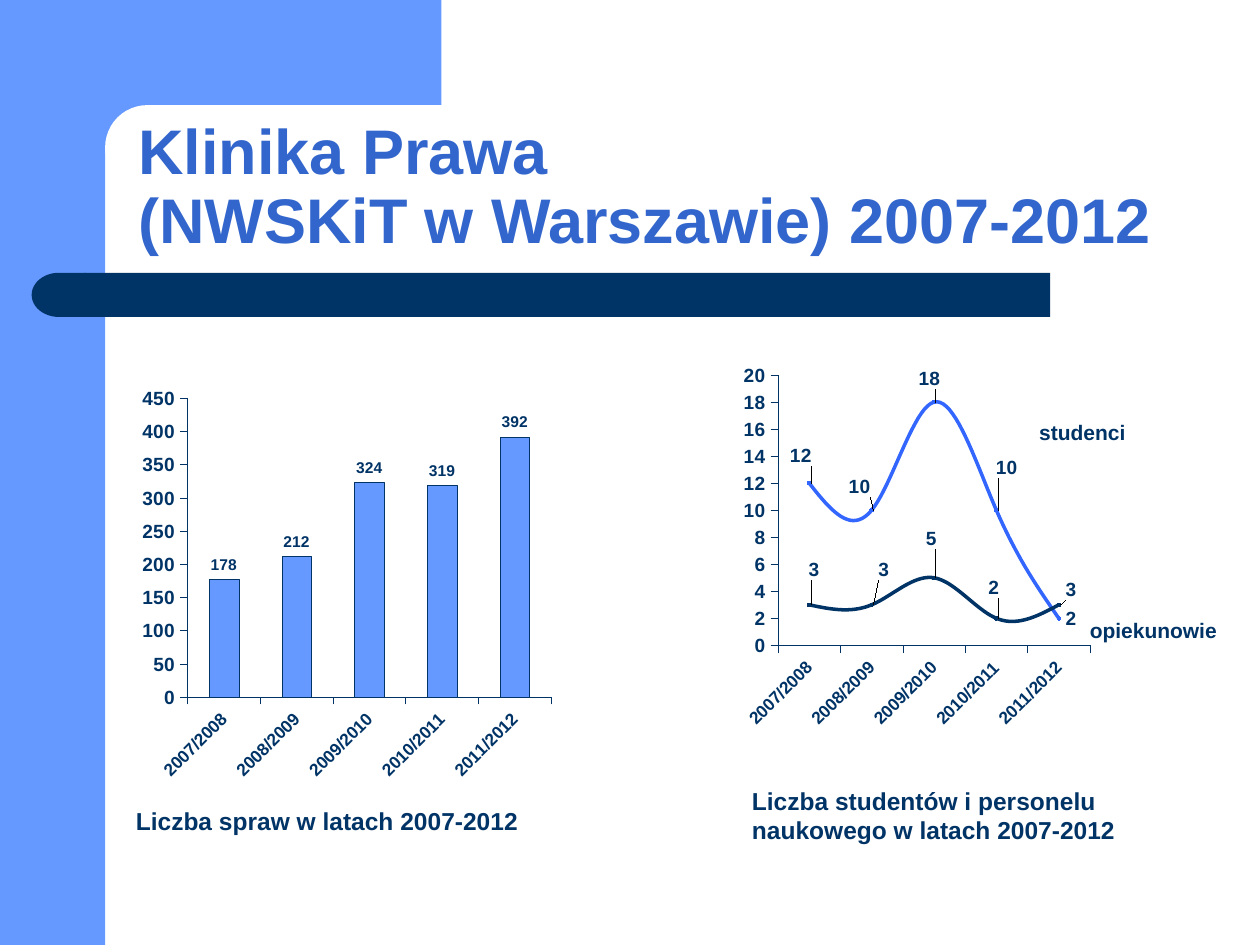
from dataclasses import dataclass

from lxml.etree import SubElement
from pptx import Presentation
from pptx.chart.axis import _BaseAxis
from pptx.chart.chart import Chart
from pptx.chart.data import CategoryChartData
from pptx.chart.series import LineSeries
from pptx.dml.color import RGBColor
from pptx.enum.chart import XL_CHART_TYPE, XL_LABEL_POSITION, XL_MARKER_STYLE, XL_TICK_MARK
from pptx.enum.shapes import MSO_SHAPE
from pptx.enum.text import MSO_ANCHOR
from pptx.oxml.ns import qn
from pptx.slide import Slide
from pptx.text.text import Font
from pptx.util import Cm, Pt

SKY = RGBColor(0x66, 0x99, 0xFF)
NAVY = RGBColor(0x00, 0x33, 0x66)
BLUE = RGBColor(0x33, 0x66, 0xCC)
BRIGHT = RGBColor(0x33, 0x66, 0xFF)
WHITE = RGBColor(0xFF, 0xFF, 0xFF)
FONT_NAME = "Arial"
YEARS = [f"{year}/{year + 1}" for year in range(2007, 2012)]


@dataclass
class Box:
    left: float
    top: float
    width: float
    height: float

    def lengths(self) -> list[Cm]:
        return [Cm(value) for value in (self.left, self.top, self.width, self.height)]


@dataclass
class Panel:
    kind: MSO_SHAPE
    box: Box
    color: RGBColor
    mirrored: bool = False


@dataclass
class Label:
    text: str
    box: Box
    size: float
    color: RGBColor = NAVY
    anchor: MSO_ANCHOR = MSO_ANCHOR.TOP
    line_spacing: float = 1.0


@dataclass
class Curve:
    name: str
    values: list[int]
    color: RGBColor
    marker_color: RGBColor
    label_shifts: list[tuple[float, float]]


PANELS = [
    Panel(MSO_SHAPE.RECTANGLE, Box(0, 0, 2.12, 19.05), SKY),
    Panel(MSO_SHAPE.RECTANGLE, Box(1.9, 0, 7, 2.96), SKY),
    Panel(MSO_SHAPE.ROUNDED_RECTANGLE, Box(2.12, 2.12, 14.17, 1.7), WHITE),
    Panel(MSO_SHAPE.RECTANGLE, Box(1.7, 5.5, 19.47, 0.89), NAVY),
    Panel(MSO_SHAPE.FLOWCHART_DELAY, Box(0.64, 5.5, 1.09, 0.89), NAVY, mirrored=True),
]
LABELS = [
    Label("studenci", Box(20.7, 8.33, 3.2, 0.76), 12),
    Label("opiekunowie", Box(21.72, 12.32, 3.2, 0.76), 12),
    Label("Liczba spraw w latach 2007-2012", Box(2.49, 16.13, 8.61, 0.84), 14),
    Label("Liczba studentów i personelu naukowego w latach 2007-2012",
          Box(14.91, 15.72, 8.61, 1.45), 14),
    Label("Klinika Prawa\v(NWSKiT w Warszawie) 2007-2012", Box(2.54, 2.12, 22.22, 3.18),
          36, BLUE, MSO_ANCHOR.BOTTOM, 0.9),
]
CASES = [178, 212, 324, 319, 392]
CURVES = [
    Curve("studenci", [12, 10, 18, 10, 2], BRIGHT, SKY,
          [(-0.07, -0.07), (-0.08, -0.06), (-0.06, -0.06), (-0.02, -0.11)]),
    Curve("opiekunowie", [3, 3, 5, 2, 3], NAVY, BLUE,
          [(-0.02, -0.09), (0, -0.09), (-0.04, -0.1), (-0.04, -0.08), (0, -0.04)]),
]


def style_font(font: Font, size: float, color: RGBColor = NAVY) -> None:
    font.name = FONT_NAME
    font.size = Pt(size)
    font.bold = True
    font.color.rgb = color


def add_panel(page: Slide, panel: Panel) -> None:
    shape = page.shapes.add_shape(panel.kind, *panel.box.lengths())
    shape.shadow.inherit = False
    shape.fill.solid()
    shape.fill.fore_color.rgb = panel.color
    shape.line.fill.background()
    if panel.kind == MSO_SHAPE.ROUNDED_RECTANGLE:
        shape.adjustments[0] = 0.5
    if panel.mirrored:
        shape._element.spPr.find(qn("a:xfrm")).set("flipH", "1")


def add_label(page: Slide, label: Label) -> None:
    frame = page.shapes.add_textbox(*label.box.lengths()).text_frame
    frame.word_wrap = True
    frame.vertical_anchor = label.anchor
    frame.text = label.text
    para = frame.paragraphs[0]
    para.line_spacing = label.line_spacing
    for span in para.runs:
        style_font(span.font, label.size, label.color)


def add_manual_layout(layout, **settings) -> None:
    manual = SubElement(layout, qn("c:manualLayout"))
    for name, value in settings.items():
        SubElement(manual, qn(f"c:{name}")).set("val", str(value))


def style_axis(axis: _BaseAxis, size: float) -> None:
    axis.has_major_gridlines = False
    axis.major_tick_mark = XL_TICK_MARK.OUTSIDE
    axis.minor_tick_mark = XL_TICK_MARK.NONE
    axis.format.line.color.rgb = NAVY
    axis.format.line.width = Pt(0.25)
    style_font(axis.tick_labels.font, size)


def add_chart(page: Slide, kind: XL_CHART_TYPE, box: Box, series: dict[str, list[int]],
              top_value: int, step: int, plot_area: Box) -> Chart:
    """Add a chart; plot_area is given in fractions of the chart's size."""
    data = CategoryChartData()
    data.categories = YEARS
    for name, values in series.items():
        data.add_series(name, values)
    chart = page.shapes.add_chart(kind, *box.lengths(), data).chart
    chart.has_legend = False
    chart.has_title = False
    style_font(chart.font, 8.9)
    style_axis(chart.category_axis, 9.9)
    style_axis(chart.value_axis, 10.9)
    chart.category_axis._element.find(f"{qn('c:txPr')}/{qn('a:bodyPr')}").set("rot", "-2700000")
    chart.value_axis.minimum_scale = 0
    chart.value_axis.maximum_scale = top_value
    chart.value_axis.major_unit = step

    plot = chart._chartSpace.chart.plotArea
    layout = plot.find(qn("c:layout"))
    if layout is None:
        layout = SubElement(plot, qn("c:layout"))
        plot.insert(0, layout)
    add_manual_layout(layout, layoutTarget="inner", xMode="edge", yMode="edge",
                      x=plot_area.left, y=plot_area.top, w=plot_area.width, h=plot_area.height)
    return chart


def add_cases_chart(page: Slide) -> None:
    chart = add_chart(page, XL_CHART_TYPE.COLUMN_CLUSTERED, Box(2.44, 7.32, 8.94, 8.86),
                      {"Liczba spraw": CASES}, 450, 50, Box(0.15, 0.08, 0.82, 0.68))
    plot = chart.plots[0]
    plot.vary_by_categories = False
    plot.gap_width = 145
    bars = plot.series[0]
    bars.format.fill.solid()
    bars.format.fill.fore_color.rgb = SKY
    bars.format.line.color.rgb = NAVY
    bars.format.line.width = Pt(0.25)
    bars.data_labels.show_value = True
    bars.data_labels.position = XL_LABEL_POSITION.OUTSIDE_END
    style_font(bars.data_labels.font, 8.9)


def style_curve(line: LineSeries, curve: Curve) -> None:
    line.smooth = True
    line.format.line.color.rgb = curve.color
    line.format.line.width = Pt(2)
    line.marker.style = XL_MARKER_STYLE.CIRCLE
    line.marker.size = 2
    line.marker.format.fill.solid()
    line.marker.format.fill.fore_color.rgb = curve.marker_color
    line.marker.format.line.color.rgb = curve.color
    labels = line.data_labels
    labels.show_value = True
    labels.position = XL_LABEL_POSITION.RIGHT
    style_font(labels.font, 10.9)
    for index in range(len(curve.label_shifts)):
        point_label = line.points[index].data_label
        style_font(point_label.font, 10.9)
        point_label.position = XL_LABEL_POSITION.RIGHT
    for element, (x, y) in zip(labels._element.findall(qn("c:dLbl")), curve.label_shifts):
        layout = SubElement(element, qn("c:layout"))
        element.insert(1, layout)
        add_manual_layout(layout, x=x, y=y)


def add_people_chart(page: Slide) -> None:
    chart = add_chart(page, XL_CHART_TYPE.LINE_MARKERS, Box(14.71, 6.93, 7.49, 7.9),
                      {curve.name: curve.values for curve in CURVES},
                      20, 2, Box(0.13, 0.08, 0.84, 0.69))
    plot = chart.plots[0]
    plot.vary_by_categories = False
    for line, curve in zip(plot.series, CURVES):
        style_curve(line, curve)


def main() -> None:
    deck = Presentation()
    deck.slide_width, deck.slide_height = Cm(25.4), Cm(19.05)
    page = deck.slides.add_slide(deck.slide_layouts[6])
    for panel in PANELS:
        add_panel(page, panel)
    add_cases_chart(page)
    add_people_chart(page)
    for label in LABELS:
        add_label(page, label)
    deck.save("out.pptx")


if __name__ == "__main__":
    main()
